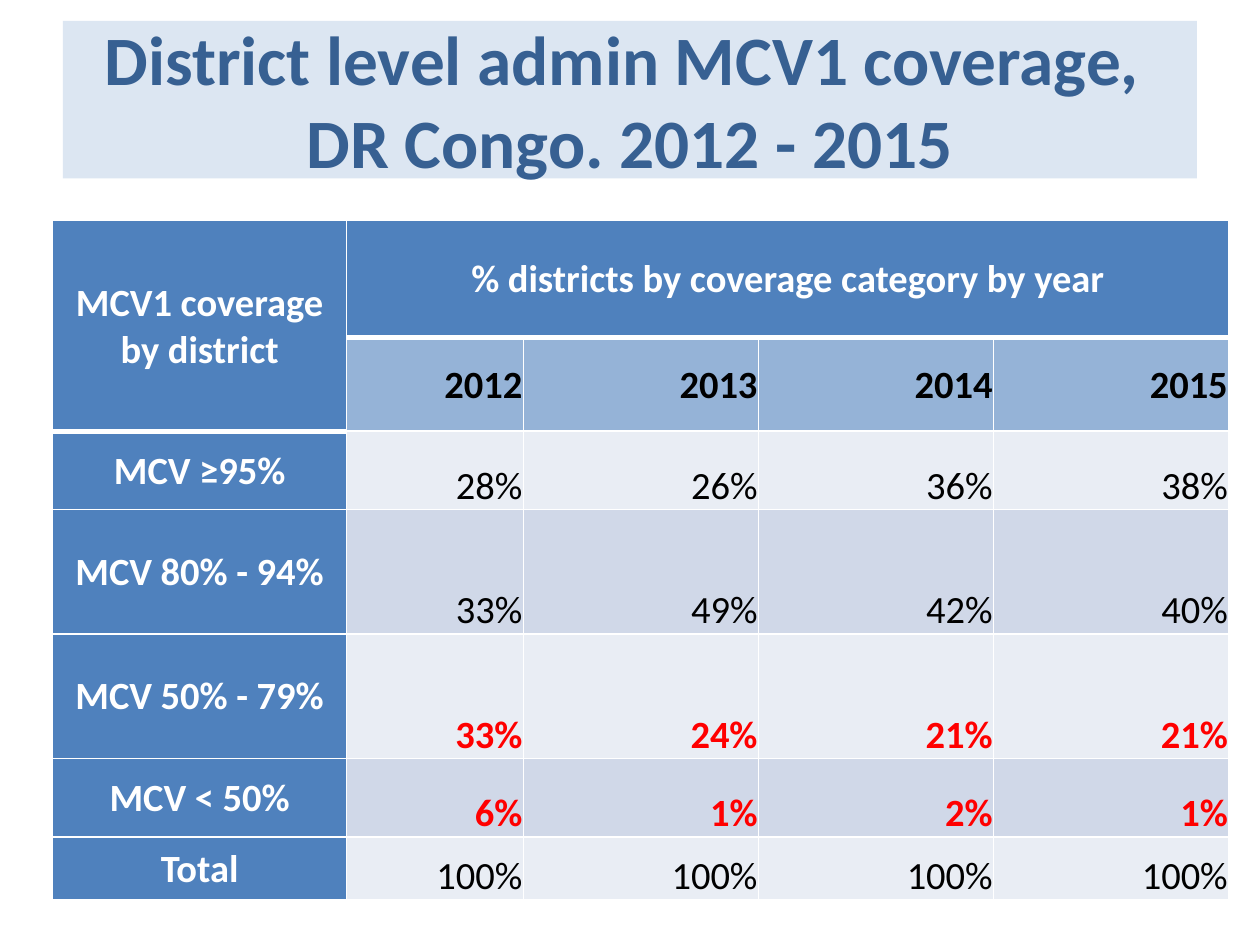
from dataclasses import dataclass

import pptx
import pptx.dml.color
import pptx.enum.text
import pptx.oxml
import pptx.oxml.ns
import pptx.table
import pptx.text.text
import pptx.util

Cm = pptx.util.Cm
RGBColor = pptx.dml.color.RGBColor
Align = pptx.enum.text.PP_ALIGN
Anchor = pptx.enum.text.MSO_ANCHOR

WHITE = RGBColor(0xFF, 0xFF, 0xFF)
BLACK = RGBColor(0x00, 0x00, 0x00)
RED = RGBColor(0xFF, 0x00, 0x00)
TITLE_FILL = RGBColor(0xDC, 0xE6, 0xF2)
TITLE_TEXT = RGBColor(0x37, 0x60, 0x92)
HEADER_FILL = RGBColor(0x4F, 0x81, 0xBD)
YEAR_FILL = RGBColor(0x95, 0xB3, 0xD7)
BAND_FILLS = (RGBColor(0xE9, 0xED, 0xF4), RGBColor(0xD0, 0xD8, 0xE8))

FONT = "Calibri"
CELL_FORMAT = {
    "margin_left": Cm(0.02),
    "margin_right": Cm(0.02),
    "margin_top": Cm(0.02),
    "margin_bottom": 0,
}
COLUMN_WIDTHS = (5.93, 3.56, 4.74, 4.74, 4.74)
HEADER_HEIGHTS = (2.36, 1.27)
YEARS = ("2012", "2013", "2014", "2015")


@dataclass(frozen=True)
class CellStyle:
    fill: RGBColor
    color: RGBColor
    bold: bool
    alignment: Align
    anchor: Anchor


@dataclass(frozen=True)
class CoverageRow:
    label: str
    height: float
    percentages: tuple[int, ...]
    alert: bool = False


HEADER = CellStyle(HEADER_FILL, WHITE, True, Align.CENTER, Anchor.MIDDLE)
YEAR = CellStyle(YEAR_FILL, BLACK, True, Align.RIGHT, Anchor.MIDDLE)

COVERAGE_ROWS = (
    CoverageRow("MCV ≥95%", 1.58, (28, 26, 36, 38)),
    CoverageRow("MCV 80% - 94%", 2.51, (33, 49, 42, 40)),
    CoverageRow("MCV 50% - 79%", 2.51, (33, 24, 21, 21), alert=True),
    CoverageRow("MCV < 50%", 1.58, (6, 1, 2, 1), alert=True),
    CoverageRow("Total", 1.27, (100, 100, 100, 100)),
)


def format_paragraph(paragraph: pptx.text.text._Paragraph, size: float,
                     color: RGBColor, bold: bool, alignment: Align) -> None:
    paragraph.alignment = alignment
    font_format = {"name": FONT, "size": pptx.util.Pt(size), "bold": bold}
    for run in paragraph.runs:
        for name, value in font_format.items():
            setattr(run.font, name, value)
        run.font.color.rgb = color


def set_borders(cell: pptx.table._Cell, top: int = 1, bottom: int = 1) -> None:
    """Give the cell white borders, with widths in points."""
    properties = cell._tc.get_or_add_tcPr()
    widths = {"lnL": 1, "lnR": 1, "lnT": top, "lnB": bottom}
    for position, (tag, width) in enumerate(widths.items()):
        border = pptx.oxml.parse_xml(
            f'<a:{tag} {pptx.oxml.ns.nsdecls("a")} w="{pptx.util.Pt(width)}">'
            f'<a:solidFill><a:srgbClr val="{WHITE}"/></a:solidFill></a:{tag}>'
        )
        properties.insert(position, border)


def write_cell(cell: pptx.table._Cell, text: str, style: CellStyle) -> None:
    cell.text = text
    for name, value in CELL_FORMAT.items():
        setattr(cell, name, value)
    cell.vertical_anchor = style.anchor
    cell.fill.solid()
    cell.fill.fore_color.rgb = style.fill
    format_paragraph(cell.text_frame.paragraphs[0], 22, style.color,
                     style.bold, style.alignment)


def add_title(slide) -> None:
    title = slide.shapes.add_textbox(Cm(1.27), Cm(0.42), Cm(22.86), Cm(3.18))
    title.fill.solid()
    title.fill.fore_color.rgb = TITLE_FILL
    frame = title.text_frame
    frame.word_wrap = True
    frame.vertical_anchor = Anchor.MIDDLE
    frame.text = "District level admin MCV1 coverage, \vDR Congo. 2012 - 2015"
    format_paragraph(frame.paragraphs[0], 39.6, TITLE_TEXT, True, Align.CENTER)


def add_coverage_table(slide) -> None:
    heights = HEADER_HEIGHTS + tuple(row.height for row in COVERAGE_ROWS)
    table = slide.shapes.add_table(
        len(heights), len(COLUMN_WIDTHS), Cm(1.06), Cm(4.45),
        Cm(sum(COLUMN_WIDTHS)), Cm(sum(heights))).table
    for column, width in zip(table.columns, COLUMN_WIDTHS):
        column.width = Cm(width)
    for table_row, height in zip(table.rows, heights):
        table_row.height = Cm(height)

    table.cell(0, 0).merge(table.cell(1, 0))
    table.cell(0, 1).merge(table.cell(0, len(YEARS)))
    write_cell(table.cell(0, 0), "MCV1 coverage by district", HEADER)
    write_cell(table.cell(0, 1), "% districts by coverage category by year",
               HEADER)
    for column, year in enumerate(YEARS, start=1):
        write_cell(table.cell(1, column), year, YEAR)

    for index, row in enumerate(COVERAGE_ROWS):
        row_number = index + len(HEADER_HEIGHTS)
        style = CellStyle(BAND_FILLS[index % 2], RED if row.alert else BLACK,
                          row.alert, Align.RIGHT, Anchor.BOTTOM)
        write_cell(table.cell(row_number, 0), row.label, HEADER)
        for column, percentage in enumerate(row.percentages, start=1):
            write_cell(table.cell(row_number, column), f"{percentage}%", style)

    for row_number in range(len(heights)):
        for column in range(len(COLUMN_WIDTHS)):
            last_header_row = 1 if column == 0 else 0
            set_borders(table.cell(row_number, column),
                        top=3 if row_number == last_header_row + 1 else 1,
                        bottom=3 if row_number in (0, last_header_row) else 1)


def main() -> None:
    presentation = pptx.Presentation()
    presentation.slide_width = Cm(25.4)
    presentation.slide_height = Cm(19.05)
    slide = presentation.slides.add_slide(presentation.slide_layouts[6])
    add_title(slide)
    add_coverage_table(slide)
    presentation.save("out.pptx")


if __name__ == "__main__":
    main()
